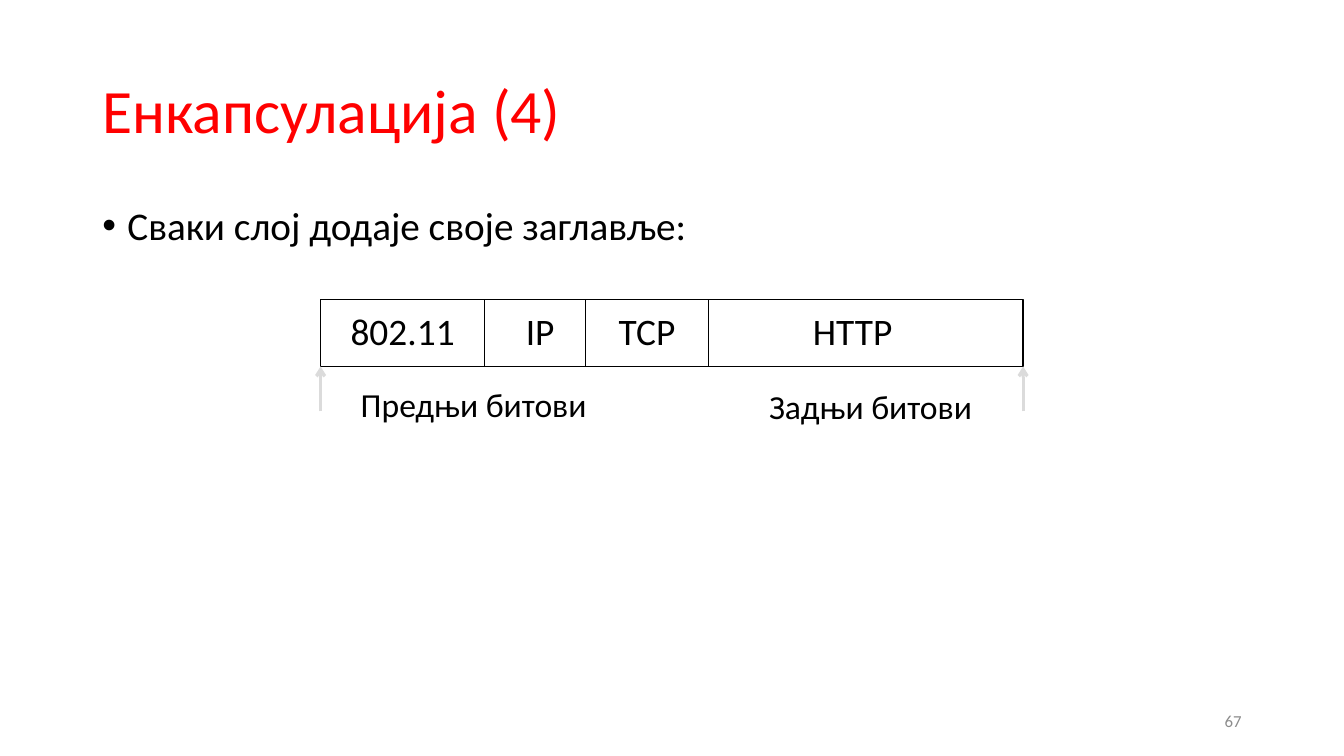
import pptx
import pptx.dml.color
import pptx.enum.shapes
import pptx.enum.text
import pptx.oxml
import pptx.oxml.ns
import pptx.util

Pt = pptx.util.Pt
RGB = pptx.dml.color.RGBColor
Align = pptx.enum.text.PP_ALIGN
Anchor = pptx.enum.text.MSO_ANCHOR
BLACK = RGB(0, 0, 0)
RED = RGB(255, 0, 0)
GRAY = RGB(0x8C, 0x8C, 0x8C)
PALE = RGB(0xDB, 0xDB, 0xDB)

TITLE = "Енкапсулација (4)"
POINT = "Сваки слој додаје своје заглавље:"
NUMBER = "67"
FIELDS = [
    ("802.11", 229, 117.4),
    ("IP", 342, 87.8),
    ("TCP", 418.3, 87.8),
    ("HTTP", 548.6, 121),
]
SPLITS = [346.3, 418.3, 506.2]
NOTES = [
    ("Предњи битови", 221, 270.7, 234.7),
    ("Задњи битови", 512, 272.2, 219.6),
]
LEFT, TOP, WIDTH, HEIGHT = 229, 213.8, 501.8, 48

deck = pptx.Presentation()
deck.slide_width, deck.slide_height = Pt(960), Pt(540)
slide = deck.slides.add_slide(deck.slide_layouts[6])


def add_text(text, box, size, color=BLACK, align=Align.LEFT,
             anchor=Anchor.TOP, space=1.0, before=0, bullet=None):
    shape = slide.shapes.add_textbox(*map(Pt, box))
    frame = shape.text_frame
    frame.word_wrap = True
    frame.vertical_anchor = anchor
    para = frame.paragraphs[0]
    para.alignment = align
    para.line_spacing = space
    para.space_before = Pt(before)
    run = para.add_run()
    run.text = text
    run.font.name = "Calibri"
    run.font.size = Pt(size)
    run.font.color.rgb = color
    if bullet:
        props = para._p.get_or_add_pPr()
        props.set("marL", str(Pt(18)))
        props.set("indent", str(-Pt(18)))
        ns = pptx.oxml.ns.nsdecls("a")
        props.append(pptx.oxml.parse_xml(f'<a:buFont {ns} typeface="Arial"/>'))
        props.append(pptx.oxml.parse_xml(f'<a:buChar {ns} char="{bullet}"/>'))


def add_line(x, start, end, color, width, arrow=False):
    kind = pptx.enum.shapes.MSO_CONNECTOR.STRAIGHT
    line = slide.shapes.add_connector(kind, Pt(x), Pt(start), Pt(x), Pt(end))
    line.line.color.rgb = color
    line.line.width = Pt(width)
    ns = pptx.oxml.ns.nsdecls("a")
    if arrow:
        head = pptx.oxml.parse_xml(f'<a:tailEnd {ns} type="arrow"/>')
        line.line._get_or_add_ln().append(head)
    line._element.spPr.append(pptx.oxml.parse_xml(f"<a:effectLst {ns}/>"))


add_text(TITLE, (66, 29, 828, 104.4), 44, color=RED,
         anchor=Anchor.MIDDLE, space=0.9)
add_text(POINT, (66, 144, 828, 342.7), 28, space=0.9, before=10, bullet="•")
add_text(NUMBER, (678, 500.5, 216, 28.8), 12, color=GRAY,
         align=Align.RIGHT, anchor=Anchor.MIDDLE)

packet = slide.shapes.add_shape(pptx.enum.shapes.MSO_SHAPE.RECTANGLE,
                                *map(Pt, (LEFT, TOP, WIDTH, HEIGHT)))
packet.shadow.inherit = False
packet.fill.background()
packet.line.color.rgb = BLACK
packet.line.width = Pt(1)

for name, x, width in FIELDS:
    add_text(name, (x, 216.7, width, 39.6), 26.7, align=Align.CENTER)
for x in SPLITS:
    add_line(x, TOP, TOP + HEIGHT, BLACK, 1)
for x in (LEFT, LEFT + WIDTH):
    add_line(x, 293.8, TOP + HEIGHT, PALE, 2.25, arrow=True)
for note, x, y, width in NOTES:
    add_text(note, (x, y, width, 36), 24, align=Align.CENTER)

deck.save("out.pptx")
